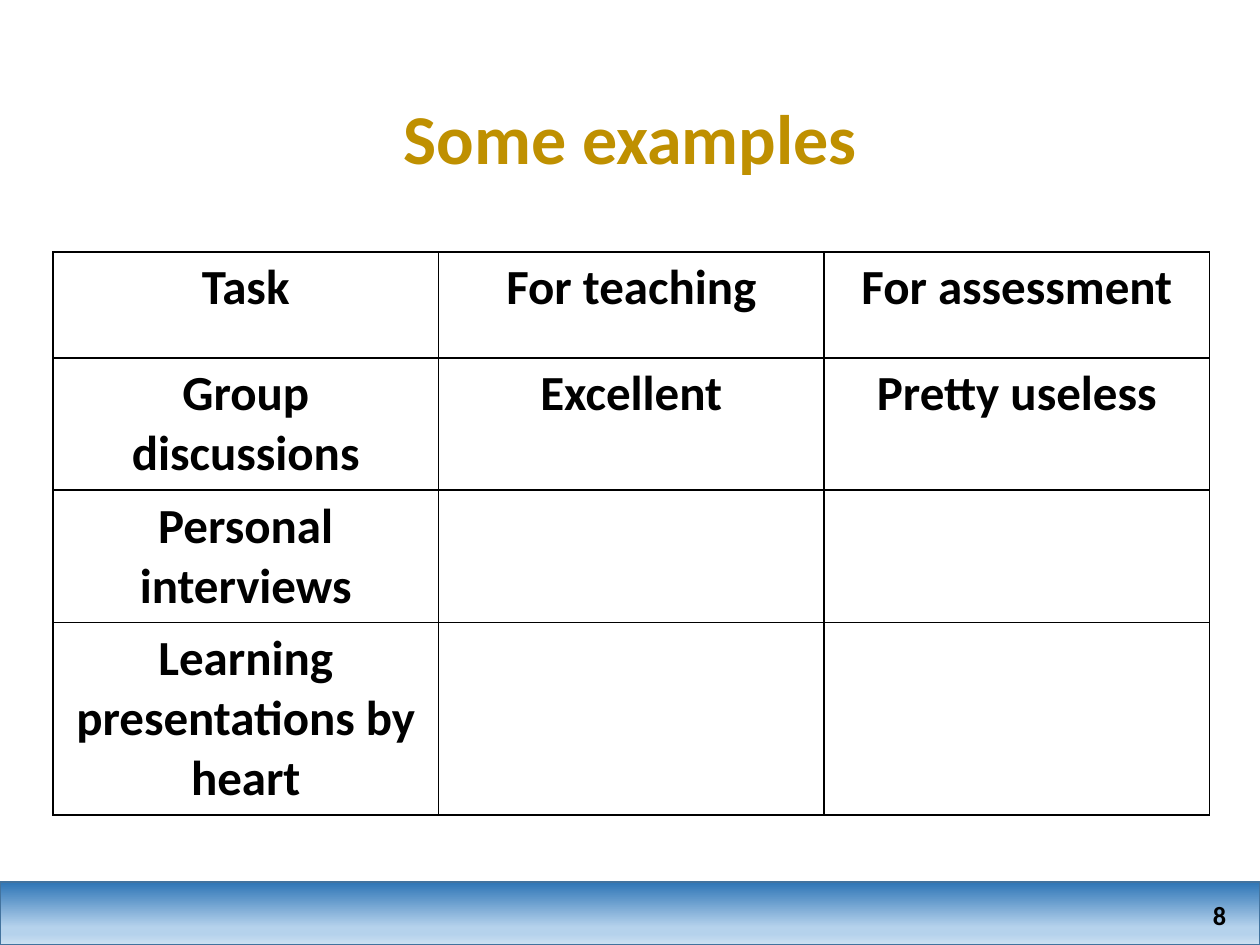
from copy import deepcopy
from typing import NamedTuple

from lxml import etree
from pptx import Presentation
from pptx.dml.color import RGBColor
from pptx.enum import shapes, text
from pptx.oxml import ns
from pptx.util import Inches, Pt

FONT = "Calibri"
COLORS = {
    "title": "BF9000",
    "title_outline": "806000",
    "ink": "000000",
    "paper": "FFFFFF",
    "band_edge": "43739E",
}
BAND_STOPS = [(0, "2E75B6"), (72, "B5D2EC"), (83, "B5D2EC"), (100, "CEE1F2")]
CELL_BORDERS = ("a:lnL", "a:lnR", "a:lnT", "a:lnB")


class Example(NamedTuple):
    task: str
    teaching: str = ""
    assessment: str = ""


EXAMPLES = [
    Example("Task", "For teaching", "For assessment"),
    Example("Group discussions", "Excellent", "Pretty useless"),
    Example("Personal interviews"),
    Example("Learning presentations by heart"),
]


def rgb(name: str) -> RGBColor:
    return RGBColor.from_string(COLORS[name])


def format_text(frame, size: float, color: str, align) -> None:
    for paragraph in frame.paragraphs:
        paragraph.alignment = align
        for run in paragraph.runs:
            run.font.name = FONT
            run.font.size = Pt(size)
            run.font.bold = True
            run.font.color.rgb = rgb(color)


def make_line(tag: str, color: str, width: float):
    """Return a solid line element for a cell border or a text outline."""
    line = etree.Element(ns.qn(tag), w=str(Pt(width)))
    solid = etree.SubElement(line, ns.qn("a:solidFill"))
    etree.SubElement(solid, ns.qn("a:srgbClr"), val=COLORS[color])
    return line


def add_footer_band(slide) -> None:
    band = slide.shapes.add_shape(
        shapes.MSO_SHAPE.RECTANGLE, 0, Inches(7), Inches(10), Inches(0.5))
    band.shadow.inherit = False
    band.line.color.rgb = rgb("band_edge")
    band.line.width = Pt(1)
    band.fill.gradient()
    band.fill.gradient_angle = 270
    stop_list = band._element.spPr.find(".//" + ns.qn("a:gsLst"))
    for _ in range(len(BAND_STOPS) - len(stop_list)):
        stop_list.append(deepcopy(stop_list[0]))
    for stop, (percent, color) in zip(band.fill.gradient_stops, BAND_STOPS):
        stop.position = percent / 100
        stop.color.rgb = RGBColor.from_string(color)


def add_title(slide, wording: str) -> None:
    title = slide.shapes.title
    title.left, title.top = Inches(0.69), Inches(0.4)
    title.width, title.height = Inches(8.62), Inches(1.45)
    frame = title.text_frame
    frame.text = wording
    frame.vertical_anchor = text.MSO_ANCHOR.MIDDLE
    format_text(frame, 40, "title", text.PP_ALIGN.CENTER)
    heading = frame.paragraphs[0]
    heading.line_spacing = 0.9
    heading.runs[0].font._element.insert(0, make_line("a:ln", "title_outline", 0.75))


def add_examples_table(slide, examples: list[Example]) -> None:
    column_count = len(Example._fields)
    column_width, row_height = Inches(3.06), Inches(0.84)
    table = slide.shapes.add_table(
        len(examples), column_count, Inches(0.42), Inches(2),
        column_width * column_count, row_height * len(examples)).table
    table.first_row = table.horz_banding = False
    for column in table.columns:
        column.width = column_width
    for row, example in zip(table.rows, examples):
        row.height = row_height
        for cell, wording in zip(row.cells, example):
            if wording:
                cell.text_frame.text = wording
                format_text(cell.text_frame, 28, "ink", text.PP_ALIGN.CENTER)
            cell.fill.solid()
            cell.fill.fore_color.rgb = rgb("paper")
            properties = cell._tc.get_or_add_tcPr()
            for position, tag in enumerate(CELL_BORDERS):
                properties.insert(position, make_line(tag, "ink", 1))


def add_page_number(slide, number: int) -> None:
    box = slide.shapes.add_textbox(
        Inches(9.31), Inches(7.08), Inches(0.52), Inches(0.36))
    frame = box.text_frame
    frame.word_wrap = True
    frame.vertical_anchor = text.MSO_ANCHOR.MIDDLE
    frame.text = str(number)
    format_text(frame, 15, "ink", text.PP_ALIGN.RIGHT)


def main() -> None:
    deck = Presentation()
    deck.slide_width, deck.slide_height = Inches(10), Inches(7.5)
    slide = deck.slides.add_slide(deck.slide_layouts.get_by_name("Title Only"))
    add_footer_band(slide)
    add_title(slide, "Some examples")
    add_examples_table(slide, EXAMPLES)
    add_page_number(slide, 8)
    deck.save("out.pptx")


if __name__ == "__main__":
    main()
